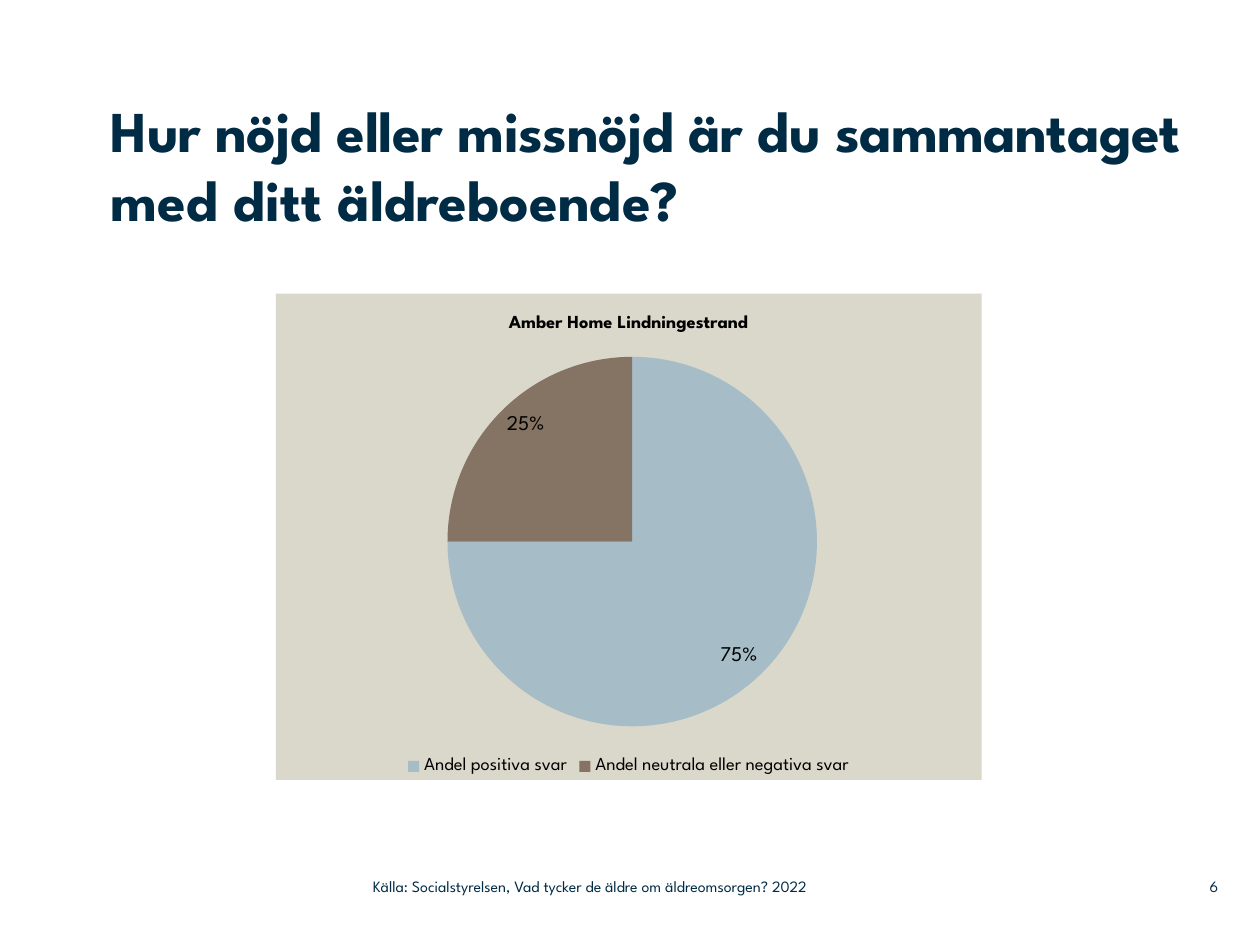
from lxml.etree import SubElement
from pptx import Presentation
from pptx.chart.data import CategoryChartData
from pptx.dml.color import RGBColor
from pptx.enum.chart import XL_CHART_TYPE, XL_LABEL_POSITION, XL_LEGEND_POSITION
from pptx.enum.text import MSO_ANCHOR, MSO_AUTO_SIZE, PP_ALIGN
from pptx.oxml import parse_xml
from pptx.oxml.ns import nsdecls, qn
from pptx.util import Pt


def color(code):
    return RGBColor.from_string(code)


class Deck:
    face = "League Spartan"
    navy = "002B45"
    black = "000000"
    sand = "DAD7CB"

    def __init__(self, width, height):
        self.file = Presentation()
        self.file.slide_width = Pt(width)
        self.file.slide_height = Pt(height)
        self.slide = self.file.slides.add_slide(self.file.slide_layouts[5])

    def font(self, font, size, code, bold=False):
        font.name = self.face
        font.size = Pt(size)
        font.bold = bold
        font.color.rgb = color(code)

    def frame(self, shape, anchor):
        frame = shape.text_frame
        frame.word_wrap = True
        frame.auto_size = MSO_AUTO_SIZE.NONE
        frame.vertical_anchor = anchor
        frame.margin_left = frame.margin_right = 0
        frame.margin_top = frame.margin_bottom = 0
        return frame.paragraphs[0]

    def run(self, para, text, size, code, bold=False):
        run = para.add_run()
        run.text = text
        self.font(run.font, size, code, bold)
        return run

    def title(self, box, parts):
        shape = self.slide.shapes.title
        shape.left, shape.top, shape.width, shape.height = map(Pt, box)
        para = self.frame(shape, MSO_ANCHOR.TOP)
        para.alignment = PP_ALIGN.LEFT
        for text, space in parts:
            run = self.run(para, text, 33, self.navy, True)
            run.font._element.set("spc", str(space))

    def note(self, box, text, align=PP_ALIGN.LEFT):
        shape = self.slide.shapes.add_textbox(*map(Pt, box))
        para = self.frame(shape, MSO_ANCHOR.MIDDLE)
        para.alignment = align
        self.run(para, text, 9, self.navy)

    def pie(self, box, title, rows, plot_box):
        data = CategoryChartData(number_format="0")
        data.categories = [name for name, value, code in rows]
        data.add_series("Series 1", [value for name, value, code in rows])
        chart = self.slide.shapes.add_chart(
            XL_CHART_TYPE.PIE, *map(Pt, box), data).chart
        self.font(chart.font, 18, self.black)
        chart.has_title = True
        para = chart.chart_title.text_frame.paragraphs[0]
        self.run(para, title, 10.5, self.black, True)
        chart.has_legend = True
        chart.legend.position = XL_LEGEND_POSITION.BOTTOM
        chart.legend.include_in_layout = False
        self.font(chart.legend.font, 10.5, self.black)

        plot = chart.plots[0]
        plot.vary_by_categories = True
        series = plot.series[0]
        for index, (name, value, code) in enumerate(rows):
            fill = series.points[index].format.fill
            fill.solid()
            fill.fore_color.rgb = color(code)
        labels = series.data_labels
        labels.show_percentage = True
        labels.show_value = False
        labels.number_format = "0%"
        labels.number_format_is_linked = False
        labels.position = XL_LABEL_POSITION.INSIDE_END
        self.font(labels.font, 12, self.black)
        self.back(chart)
        self.place(chart, plot_box)

    def back(self, chart):
        node = chart._chartSpace.find(qn("c:chart"))
        node.addnext(parse_xml(
            f'<c:spPr {nsdecls("c", "a")}><a:solidFill>'
            f'<a:srgbClr val="{self.sand}"/></a:solidFill>'
            '<a:ln><a:noFill/></a:ln></c:spPr>'))

    def place(self, chart, box):
        area = chart._chartSpace.find(".//" + qn("c:plotArea"))
        for old in area.findall(qn("c:layout")):
            area.remove(old)
        layout = parse_xml(f'<c:layout {nsdecls("c")}><c:manualLayout/></c:layout>')
        area.insert(0, layout)
        pairs = [("layoutTarget", "inner"), ("xMode", "edge"), ("yMode", "edge")]
        pairs += zip("xywh", box)
        for tag, value in pairs:
            SubElement(layout[0], qn("c:" + tag)).set("val", str(value))

    def save(self):
        self.file.save("out.pptx")


def main():
    deck = Deck(720, 540)
    deck.title((63.4, 54, 635.8, 102.2), [
        ("Hur nöjd eller missnöjd är du sammantaget ", -30),
        ("med ditt äldreboende?", 0),
    ])
    deck.note((213.1, 496.1, 319, 20.9),
              "Källa: Socialstyrelsen, Vad tycker de äldre om äldreomsorgen? 2022")
    deck.pie((157.7, 167.8, 403.2, 277.9), "Amber Home Lindningestrand", [
        ("Andel positiva svar", 75, "A6BCC6"),
        ("Andel neutrala eller negativa svar", 25, "857363"),
    ], (0.24, 0.13, 0.53, 0.76))
    deck.note((662.4, 496.1, 33.8, 20.9), "6", PP_ALIGN.RIGHT)
    deck.save()


if __name__ == "__main__":
    main()
